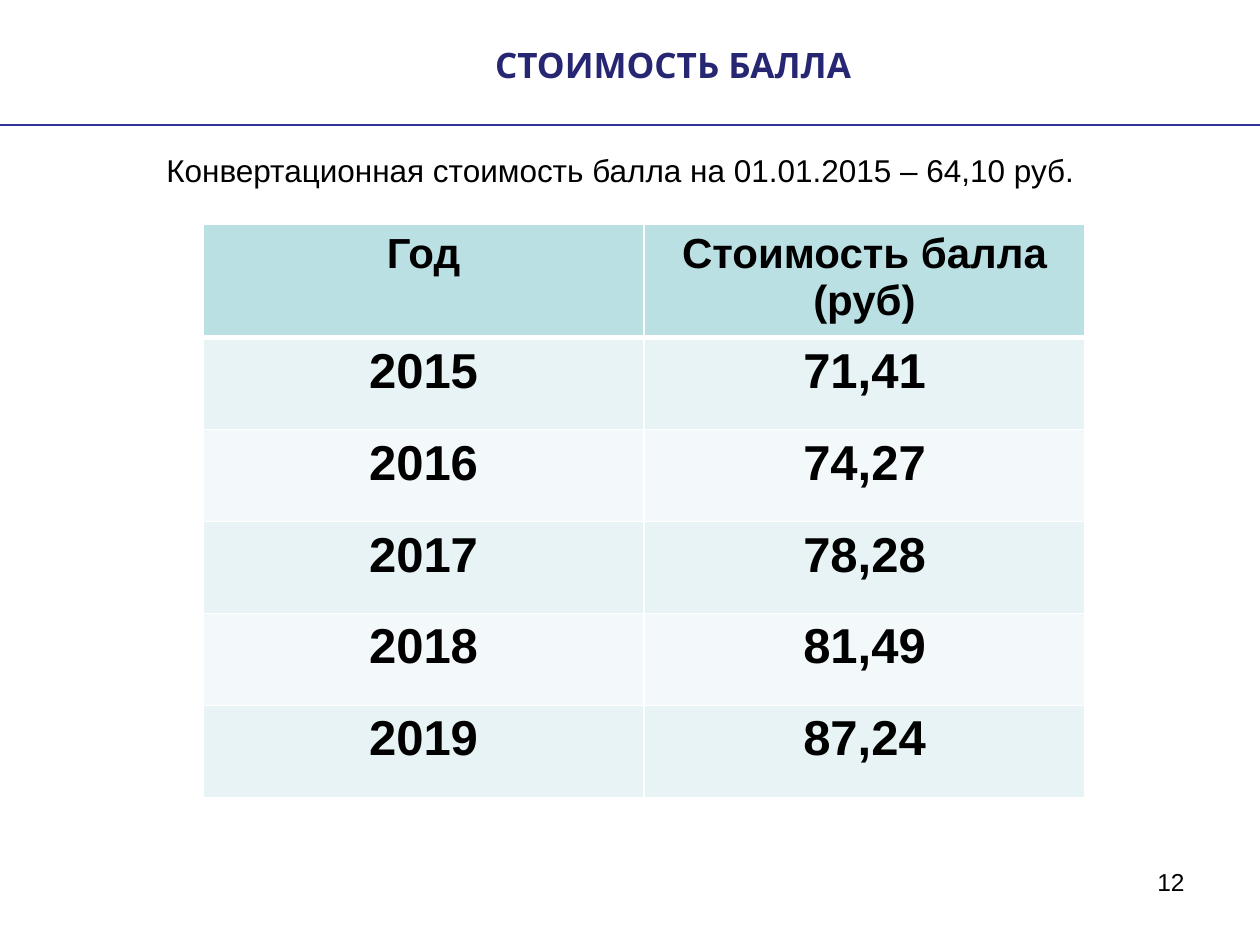
from lxml.etree import SubElement
from pptx import Presentation
from pptx.dml.color import RGBColor
from pptx.enum.shapes import MSO_CONNECTOR as Connector
from pptx.enum.text import MSO_ANCHOR as Anchor, PP_ALIGN as Align
from pptx.oxml.ns import qn
from pptx.util import Emu, Pt

BLACK = RGBColor(0x00, 0x00, 0x00)
WHITE = RGBColor(0xFF, 0xFF, 0xFF)
NAVY = RGBColor(0x26, 0x26, 0x73)
RULE_BLUE = RGBColor(0x33, 0x33, 0x99)
HEADER_FILL = RGBColor(0xBB, 0xE0, 0xE3)
BAND_FILLS = RGBColor(0xE7, 0xF3, 0xF4), RGBColor(0xF3, 0xF9, 0xFA)

PX = 914400 / 126


def px(*lengths):
    """Turn whole pixels into EMU lengths."""
    return [Emu(round(length * PX)) for length in lengths]


def write(frame, text, size=18, font="Arial", color=BLACK, bold=False,
          align=Align.LEFT, anchor=Anchor.TOP):
    frame.word_wrap = True
    frame.vertical_anchor = anchor
    para = frame.paragraphs[0]
    para.alignment = align
    span = para.add_run()
    span.text = text
    span.font.size = Pt(size)
    span.font.name = font
    span.font.bold = bold
    span.font.color.rgb = color


deck = Presentation()
deck.slide_width, deck.slide_height = px(1260, 945)
page = deck.slides.add_slide(deck.slide_layouts[5])

# Title and the rule below it
title = page.shapes.title
title.left, title.top, title.width, title.height = px(110, 37, 1126, 55)
write(title.text_frame, "СТОИМОСТЬ БАЛЛА", size=20, font="Karla", color=NAVY,
      bold=True, align=Align.CENTER, anchor=Anchor.MIDDLE)

rule = page.shapes.add_connector(Connector.STRAIGHT, *px(1260, 125, 0, 125))
rule.line.color.rgb = RULE_BLUE
rule.line.width = Pt(1.5)
SubElement(rule._element.spPr, qn("a:effectLst"))

# Conversion value
subtitle = page.shapes.add_textbox(*px(154, 145, 973, 50))
write(subtitle.text_frame,
      "Конвертационная стоимость балла на 01.01.2015 – 64,10 руб.")

# Point value by year
rows = [
    ("Год", "Стоимость балла (руб)"),
    ("2015", "71,41"),
    ("2016", "74,27"),
    ("2017", "78,28"),
    ("2018", "81,49"),
    ("2019", "87,24"),
]
table = page.shapes.add_table(len(rows), 2, *px(203, 224, 882, 576)).table
for column in table.columns:
    column.width = px(441)[0]

for row_index, values in enumerate(rows):
    is_header = row_index == 0
    table.rows[row_index].height = px(113 if is_header else 92)[0]
    for column_index, value in enumerate(values):
        cell = table.cell(row_index, column_index)
        write(cell.text_frame, value, size=24 if is_header else 28,
              bold=True, align=Align.CENTER)
        properties = cell._tc.get_or_add_tcPr()
        for side in ("L", "R", "T", "B"):
            thick = (is_header and side == "B") or (row_index == 1 and side == "T")
            border = SubElement(properties, qn(f"a:ln{side}"),
                                w=str(Pt(3 if thick else 1)))
            fill = SubElement(border, qn("a:solidFill"))
            SubElement(fill, qn("a:srgbClr"), val=str(WHITE))
        cell.fill.solid()
        cell.fill.fore_color.rgb = (
            HEADER_FILL if is_header else BAND_FILLS[(row_index - 1) % 2])

# Page number
number = page.shapes.add_textbox(*px(903, 861, 294, 66))
write(number.text_frame, "12", size=14, align=Align.RIGHT)

deck.save("out.pptx")
